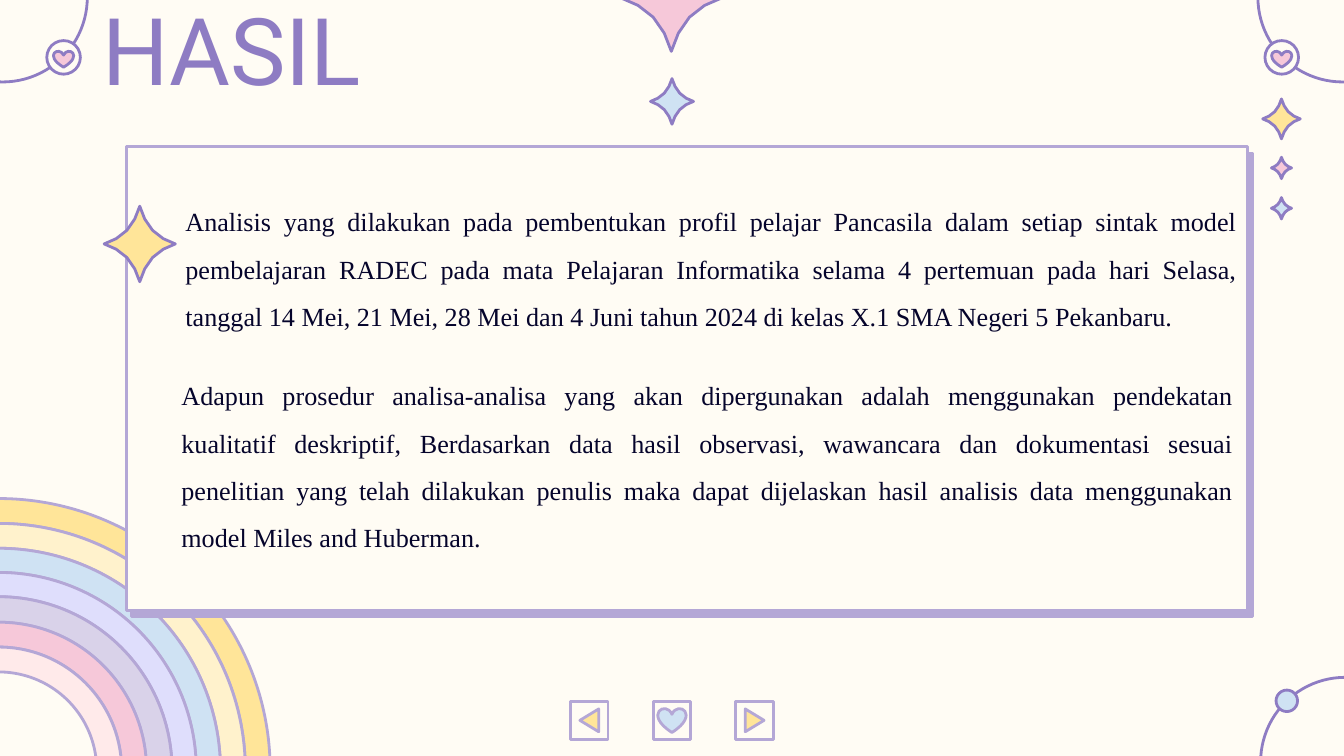
from lxml import etree
from pptx import Presentation
from pptx.dml.color import RGBColor
from pptx.enum.shapes import MSO_SHAPE
from pptx.enum.text import MSO_ANCHOR, MSO_AUTO_SIZE, PP_ALIGN
from pptx.oxml.ns import qn
from pptx.util import Inches, Pt

OVAL, RECTANGLE, TRIANGLE = MSO_SHAPE.OVAL, MSO_SHAPE.RECTANGLE, MSO_SHAPE.ISOSCELES_TRIANGLE
HEART, ARCH = MSO_SHAPE.HEART, MSO_SHAPE.BLOCK_ARC
MIDDLE, NO_FIT = MSO_ANCHOR.MIDDLE, MSO_AUTO_SIZE.NONE
RIGHT, JUSTIFY = PP_ALIGN.RIGHT, PP_ALIGN.JUSTIFY

COLORS = {
    "cream": "FFFCF4", "purple": "8E7CC3", "lilac": "B4A7D6", "ink": "05042B",
    "yellow": "FFE599", "butter": "FFF2CC", "blue": "CFE2F3", "lavender": "DFDEFC",
    "mauve": "D9D2E9", "pink": "F6C8D9", "blush": "FFEAEA",
}
RGB = {name: RGBColor.from_string(code) for name, code in COLORS.items()}

deck = Presentation()
deck.slide_width, deck.slide_height = Inches(10), Inches(5.625)
CELL = deck.slide_width / 100
page = deck.slides.add_slide(deck.slide_layouts[5])
page.background.fill.solid()
page.background.fill.fore_color.rgb = RGB["cream"]

star_arm = [(0, -0.5), (0.07, -0.33), (0.18, -0.18), (0.33, -0.07)]
STAR = []
for turn in range(4):
    STAR += star_arm
    star_arm = [(-y, x) for x, y in star_arm]


def add_figure(figure, center_x, center_y, width, height, fill, line):
    if figure is STAR:
        points = [(round((center_x + x * width) * CELL), round((center_y + y * height) * CELL))
                  for x, y in figure]
        builder = page.shapes.build_freeform(*points[0])
        builder.add_line_segments(points[1:])
        shape = builder.convert_to_shape()
    else:
        box = (center_x - width / 2, center_y - height / 2, width, height)
        shape = page.shapes.add_shape(figure, *(round(length * CELL) for length in box))
    shape.shadow.inherit = False
    if fill:
        shape.fill.solid()
        shape.fill.fore_color.rgb = RGB[fill]
    else:
        shape.fill.background()
    shape.line.color.rgb = RGB[line]
    shape.line.width = Pt(1.5)
    return shape


bands = ["yellow", "butter", "blue", "lavender", "mauve", "pink", "blush"]
radii = [20.2, 18.35, 16.5, 14.7, 12.9, 11, 9.15, 7.3]
for color, outer, inner in zip(bands, radii, radii[1:]):
    band = add_figure(ARCH, -0.1, 57.3, outer * 2, outer * 2, color, "lilac")
    band.adjustments[2] = (outer - inner) / (outer * 2)

for corner_x, badge_x in ((0.2, 4.73), (99.9, 95.37)):
    add_figure(OVAL, corner_x, -0.2, 12.6, 12.6, None, "purple")
    add_figure(OVAL, badge_x, 4.27, 2.5, 2.5, "cream", "purple")
    add_figure(HEART, badge_x, 4.4, 1.5, 1.2, "pink", "purple")
add_figure(OVAL, 100.1, 56.7, 12.6, 12.6, None, "purple")
add_figure(OVAL, 95.75, 52.15, 1.6, 1.6, "blue", "purple")

panel = add_figure(RECTANGLE, 51.1, 28.15, 83.4, 34.5, "cream", "lilac")
effects = panel._element.spPr.find(qn("a:effectLst"))
shadow = etree.SubElement(effects, qn("a:outerShdw"), blurRad="0", dist=str(Pt(4.5)),
                          dir="3000000", algn="bl", rotWithShape="0")
etree.SubElement(shadow, qn("a:srgbClr"), val=COLORS["lilac"])

for center_x, center_y, width, color in (
    (49.95, -0.15, 7.5, "pink"), (50, 7.55, 3.2, "blue"), (95.35, 8.85, 2.8, "yellow"),
    (95.35, 12.5, 1.5, "pink"), (95.35, 15.5, 1.5, "blue"), (10.4, 18.15, 5.3, "yellow"),
):
    add_figure(STAR, center_x, center_y, width, width * 1.06, color, "purple")

for center_x, figure, width, height, color, angle in (
    (43.85, TRIANGLE, 1.7, 1.4, "yellow", 270),
    (50, HEART, 2.1, 1.8, "blue", 0),
    (56.15, TRIANGLE, 1.7, 1.4, "yellow", 90),
):
    add_figure(RECTANGLE, center_x, 53.6, 2.8, 2.8, "cream", "lilac")
    add_figure(figure, center_x, 53.6, width, height, color, "lilac").rotation = angle

title = page.shapes.title
first_text, second_text = (page.shapes.add_textbox(0, 0, 0, 0) for number in range(2))
for box, place, words, font_name, size, color, align in (
    (title, (-19.3, -1, 47.2, 9.2), "HASIL", "Roboto", 50, "purple", RIGHT),
    (first_text, (7.8, 10.2, 85.3, 18.4),
     "Analisis yang dilakukan pada pembentukan profil pelajar Pancasila dalam setiap sintak "
     "model pembelajaran RADEC pada mata Pelajaran Informatika selama 4 pertemuan pada hari "
     "Selasa, tanggal 14 Mei, 21 Mei, 28 Mei dan 4 Juni tahun 2024 di kelas X.1 SMA Negeri 5 "
     "Pekanbaru.", "Times New Roman", 14, "ink", JUSTIFY),
    (second_text, (7.5, 24.9, 85.3, 18.4),
     "Adapun prosedur analisa-analisa yang akan dipergunakan adalah menggunakan pendekatan "
     "kualitatif deskriptif, Berdasarkan data hasil observasi, wawancara dan dokumentasi sesuai "
     "penelitian yang telah dilakukan penulis maka dapat dijelaskan hasil analisis data "
     "menggunakan model Miles and Huberman.", "Times New Roman", 14, "ink", JUSTIFY),
):
    box.left, box.top, box.width, box.height = (round(length * CELL) for length in place)
    frame = box.text_frame
    frame.text = words
    frame.word_wrap = True
    frame.auto_size = NO_FIT
    frame.vertical_anchor = MIDDLE
    frame.margin_left = frame.margin_right = round(CELL)
    frame.margin_top = frame.margin_bottom = round(CELL)
    para = frame.paragraphs[0]
    para.alignment = align
    para.font.name = font_name
    para.font.size = Pt(size)
    para.font.color.rgb = RGB[color]
    if box is not title:
        frame.margin_left = round(6 * CELL)
        para.line_spacing = 1.5
        para.space_after = Pt(6)

deck.save("out.pptx")
